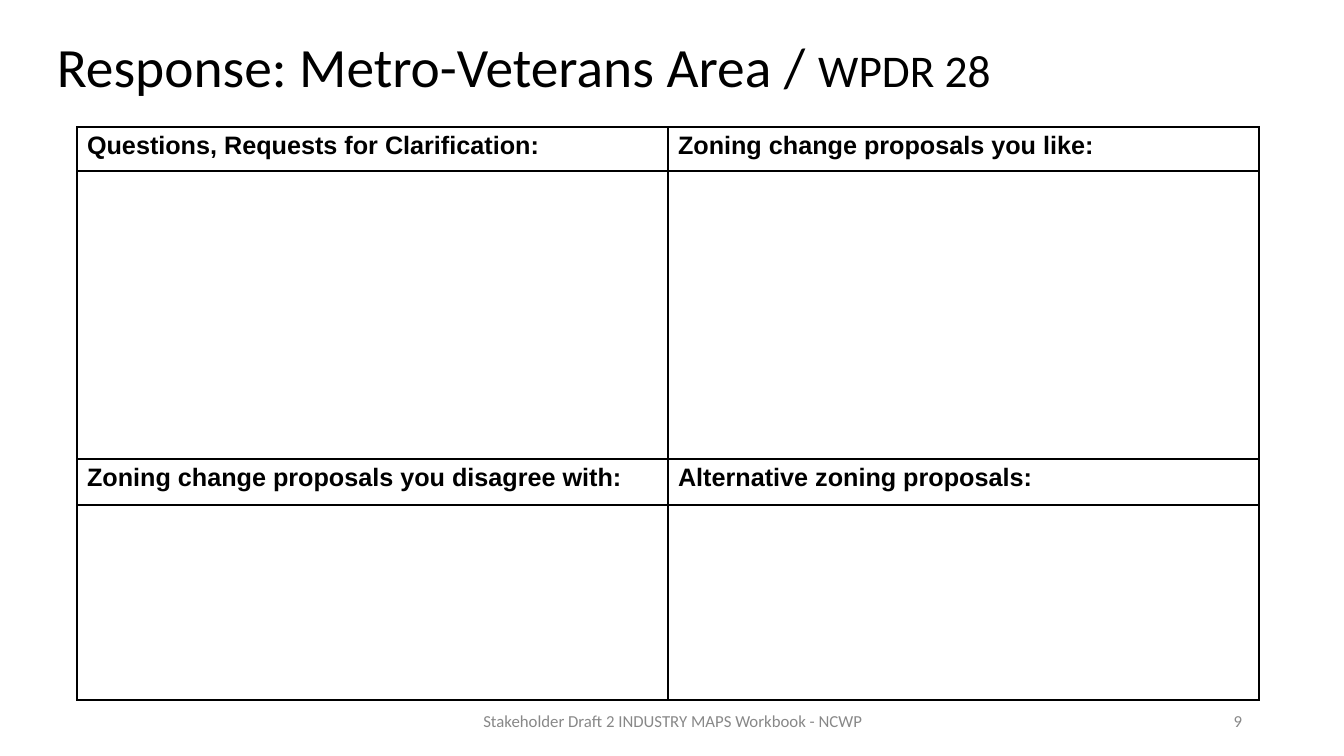
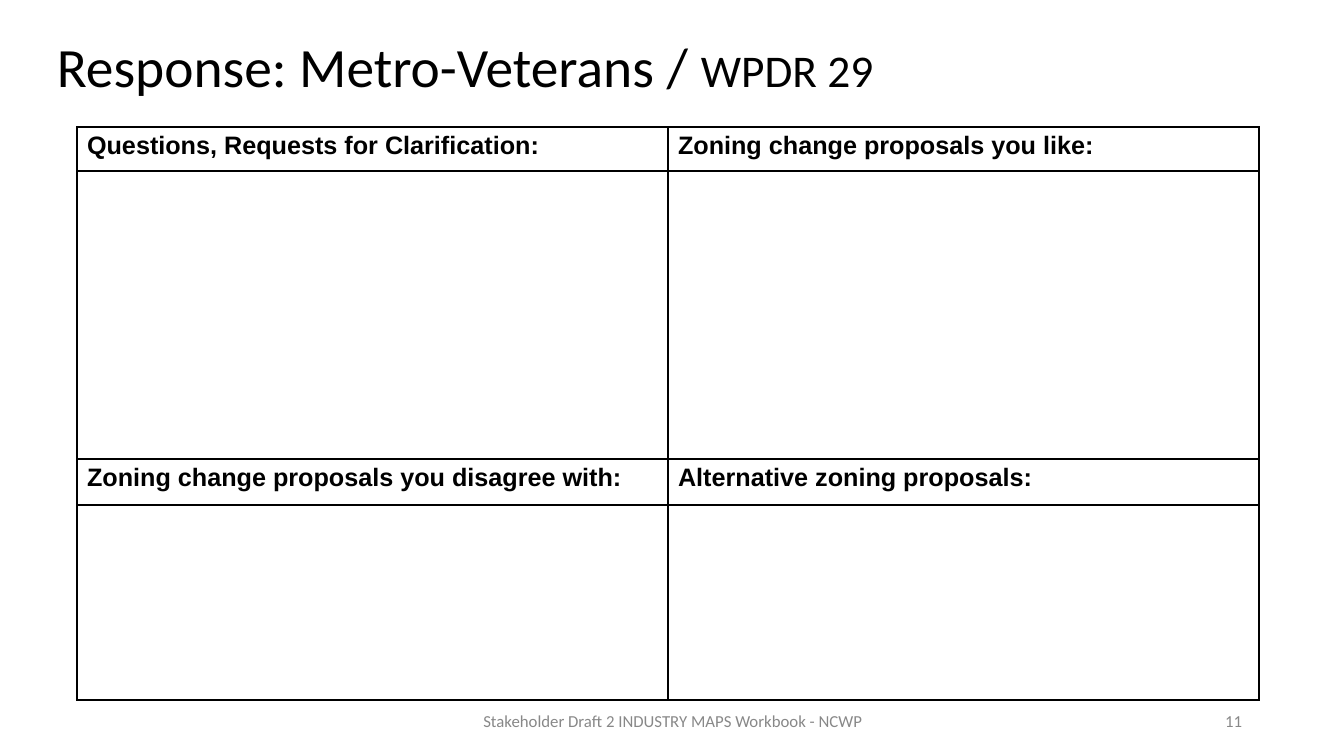
from lxml.etree import SubElement
from pptx import Presentation
from pptx.dml.color import RGBColor
from pptx.enum.text import MSO_ANCHOR as ANCHOR, PP_ALIGN as ALIGN
from pptx.oxml.ns import qn
from pptx.util import Emu, Pt

BLACK = RGBColor(0x00, 0x00, 0x00)
GREY = RGBColor(0x88, 0x88, 0x88)
HEAD_FONT, TABLE_FONT = "Calibri", "Arial"

# Boxes: left, top, width, height in px
SLIDE_W, SLIDE_H = 1344, 756
TITLE_BOX = (47, 40, 1205, 60)
TABLE_BOX = (77, 127, 1182, 573)
FOOTER_BOX = (446, 701, 454, 40)
NUMBER_BOX = (950, 701, 302, 40)
ROW_HEIGHTS = (44, 288, 46, 195)

FOOTER = "Stakeholder Draft 2 INDUSTRY MAPS Workbook - NCWP"
PROMPTS = (
    ("Questions, Requests for Clarification:", "Zoning change proposals you like:"),
    ("Zoning change proposals you disagree with:", "Alternative zoning proposals:"),
)
RESPONSES = (
    ("Response: Metro-Veterans Area / ", "WPDR 28", 9),
    ("Response: Metro-Veterans / ", "WPDR 29", 11),
)


def px(n):
    return Emu(round(n * 914400 / 100.8))


def add_run(p, text, size, font=HEAD_FONT, color=BLACK, bold=False):
    r = p.add_run()
    r.text = text
    r.font.name, r.font.size, r.font.bold = font, Pt(size), bold
    r.font.color.rgb = color


def add_text(s, box, align=ALIGN.LEFT):
    """Add a wrapped, middle-anchored text box and return its paragraph."""
    tf = s.shapes.add_textbox(*map(px, box)).text_frame
    tf.word_wrap = True
    tf.vertical_anchor = ANCHOR.MIDDLE
    p = tf.paragraphs[0]
    p.alignment = align
    return p


def add_title(s, box, area, plan):
    p = add_text(s, box)
    p.line_spacing = 0.9
    add_run(p, area, 39.6)
    add_run(p, plan, 32.4)


def add_footer(s, number):
    add_run(add_text(s, FOOTER_BOX, ALIGN.CENTER), FOOTER, 12, color=GREY)
    add_run(add_text(s, NUMBER_BOX, ALIGN.RIGHT), str(number), 12, color=GREY)


def outline_cell(cell):
    cell.fill.background()
    tc_pr = cell._tc.get_or_add_tcPr()
    for i, side in enumerate(("lnL", "lnR", "lnT", "lnB")):
        ln = SubElement(tc_pr, qn(f"a:{side}"), w=str(Pt(1)))
        fill = SubElement(ln, qn("a:solidFill"))
        SubElement(fill, qn("a:srgbClr"), val=str(BLACK))
        tc_pr.insert(i, ln)  # borders come before the fill


def add_response_table(s, box):
    table = s.shapes.add_table(len(ROW_HEIGHTS), 2, *map(px, box)).table
    table.first_row = table.horz_banding = False
    for col in table.columns:
        col.width = px(box[2] / 2)
    for row, height in zip(table.rows, ROW_HEIGHTS):
        row.height = px(height)
    for cell in table.iter_cells():
        outline_cell(cell)
    # Prompts sit above each row of blank answer cells
    for i, pair in enumerate(PROMPTS):
        for j, prompt in enumerate(pair):
            p = table.cell(2 * i, j).text_frame.paragraphs[0]
            add_run(p, prompt, 18, TABLE_FONT, bold=True)


def add_response_slide(prs, area, plan, number):
    s = prs.slides.add_slide(prs.slide_layouts[6])
    add_title(s, TITLE_BOX, area, plan)
    add_footer(s, number)
    add_response_table(s, TABLE_BOX)


def main():
    prs = Presentation()
    prs.slide_width, prs.slide_height = px(SLIDE_W), px(SLIDE_H)
    for response in RESPONSES:
        add_response_slide(prs, *response)
    prs.save("out.pptx")


if __name__ == "__main__":
    main()
